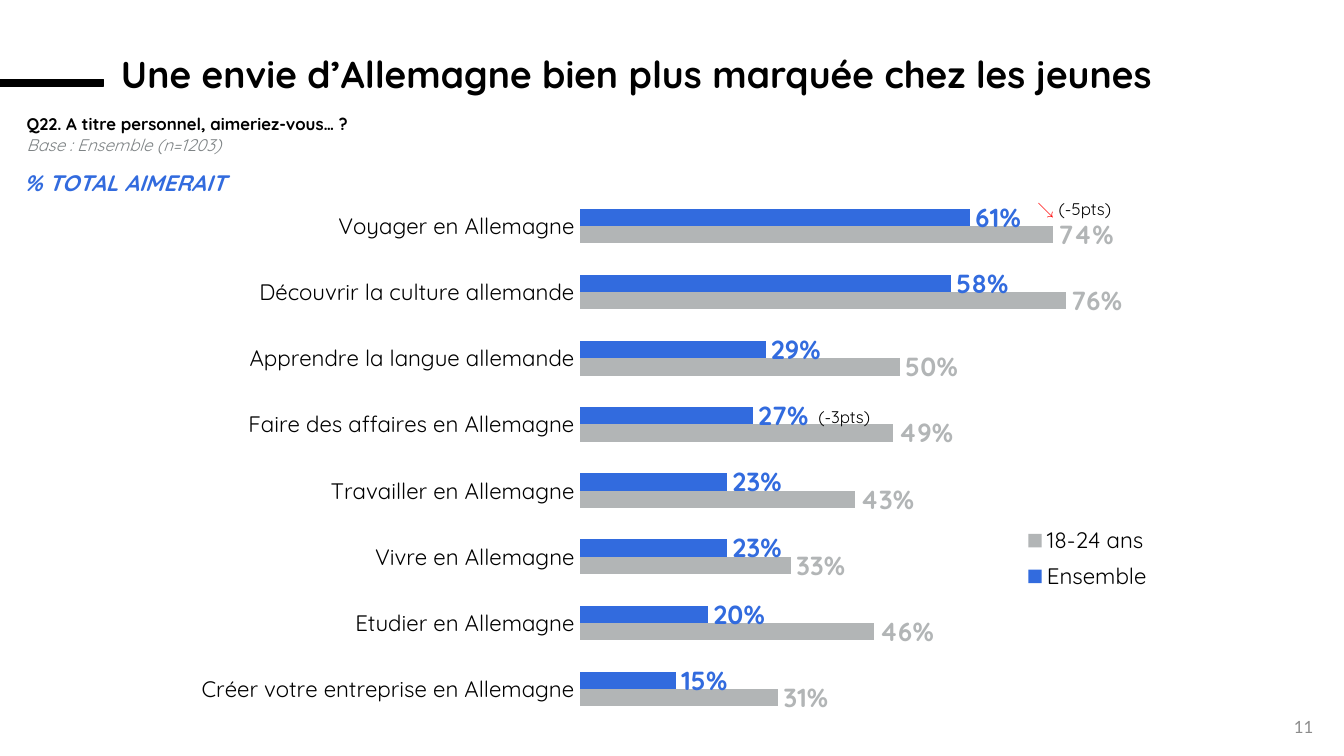
from lxml.etree import SubElement
from pptx import Presentation
from pptx.chart.data import CategoryChartData
from pptx.dml.color import RGBColor
from pptx.enum.chart import XL_CHART_TYPE, XL_LABEL_POSITION, XL_LEGEND_POSITION, XL_TICK_LABEL_POSITION, XL_TICK_MARK
from pptx.enum.shapes import MSO_SHAPE
from pptx.enum.text import MSO_ANCHOR, PP_ALIGN
from pptx.oxml.ns import qn
from pptx.util import Inches, Pt

BLACK = RGBColor(0x00, 0x00, 0x00)
BLUE = RGBColor(0x32, 0x6B, 0xDE)
SILVER = RGBColor(0xB2, 0xB5, 0xB6)
GREY = RGBColor(0x7E, 0x83, 0x85)
PAGE_GREY = RGBColor(0x8C, 0x8C, 0x8C)
RED = RGBColor(0xFF, 0x00, 0x00)


def style(font, size, color, **formats):
    font.size = Pt(size)
    font.color.rgb = color
    for name, value in {"name": "Quicksand", "bold": False, **formats}.items():
        setattr(font, name, value)


def set_layout(parent, index, target, **box):
    """Place a chart part by fractions of the chart area."""
    for old in parent.findall(qn("c:layout")):
        parent.remove(old)
    layout = SubElement(parent, qn("c:layout"))
    parent.insert(index, layout)
    manual = SubElement(layout, qn("c:manualLayout"))
    if target:
        SubElement(manual, qn("c:layoutTarget")).set("val", target)
    for mode in ("xMode", "yMode"):
        SubElement(manual, qn(f"c:{mode}")).set("val", "edge")
    for name, value in box.items():
        SubElement(manual, qn(f"c:{name}")).set("val", str(value))


# Widescreen slide, 16:9
prs = Presentation()
prs.slide_width = Inches(10)
prs.slide_height = prs.slide_width * 9 // 16
s = prs.slides.add_slide(prs.slide_layouts[5])

# Title
title = s.shapes.title
title.left, title.top, title.width, title.height = (Inches(v) for v in (0.9, 0.44, 8.87, 0.27))
tf = title.text_frame
tf.text = "Une envie d’Allemagne bien plus marquée chez les jeunes"
tf.margin_left = tf.margin_top = tf.margin_right = tf.margin_bottom = 0
tf.vertical_anchor = MSO_ANCHOR.BOTTOM
p = tf.paragraphs[0]
p.alignment, p.line_spacing = PP_ALIGN.LEFT, 0.8
style(p.runs[0].font, 20, BLACK, bold=True)

# Bar beside the title
bar = s.shapes.add_shape(MSO_SHAPE.RECTANGLE, 0, Inches(0.59), Inches(0.77), Inches(0.05))
bar.shadow.inherit = False
bar.fill.solid()
bar.fill.fore_color.rgb = BLACK
bar.line.color.rgb = BLACK
bar.line.width = Pt(0.75)

# Chart
data = CategoryChartData(number_format="0%")
data.categories = [
    "Voyager en Allemagne", "Découvrir la culture allemande",
    "Apprendre la langue allemande", "Faire des affaires en Allemagne",
    "Travailler en Allemagne", "Vivre en Allemagne",
    "Etudier en Allemagne", "Créer votre entreprise en Allemagne",
]
data.add_series("Ensemble", (0.61, 0.58, 0.29, 0.27, 0.23, 0.23, 0.20, 0.15))
data.add_series("18-24 ans", (0.74, 0.76, 0.50, 0.49, 0.43, 0.33, 0.46, 0.31))
chart = s.shapes.add_chart(XL_CHART_TYPE.BAR_CLUSTERED, Inches(1.5), Inches(1.28),
                           Inches(7.1), Inches(4.23), data).chart
chart.has_title = False
style(chart.font, 10, BLUE)

plot = chart.plots[0]
plot.gap_width, plot.overlap, plot.vary_by_categories = 182, 0, False
set_layout(plot._element.getparent(), 0, "inner", x=0.394, y=0.037, w=0.606, h=0.931)
for series, color in zip(plot.series, (BLUE, SILVER)):
    series.format.fill.solid()
    series.format.fill.fore_color.rgb = color
    labels = series.data_labels
    labels.show_value = True
    labels.position = XL_LABEL_POSITION.OUTSIDE_END
    labels.number_format, labels.number_format_is_linked = "0%", False
    style(labels.font, 14, color, bold=True)

# Axes
axis = chart.category_axis
axis.reverse_order = True
axis.major_tick_mark = axis.minor_tick_mark = XL_TICK_MARK.NONE
axis.tick_label_position = XL_TICK_LABEL_POSITION.NEXT_TO_AXIS
axis.format.line.fill.background()
style(axis.tick_labels.font, 12, BLACK)
values = chart.value_axis
values.minimum_scale, values.maximum_scale = 0, 0.9
values.major_tick_mark = values.minor_tick_mark = XL_TICK_MARK.NONE
values.tick_labels.number_format, values.tick_labels.number_format_is_linked = "0%", False
values.has_major_gridlines = values.visible = False

# Legend
chart.has_legend = True
legend = chart.legend
legend.position = XL_LEGEND_POSITION.RIGHT
legend.include_in_layout = False
style(legend.font, 12, BLACK)
set_layout(legend._element, 1, None, x=0.86, y=0.61, w=0.14, h=0.14)

# Question, subtitle, changes and page number: box, then one list of runs per paragraph
texts = [
    ((0.08, 1.21, 2.5, 0.3), [[("% TOTAL AIMERAIT", 12, BLUE, {"bold": True, "italic": True})]]),
    ((0.1, 0.8, 8.94, 0.4), [
        [("Q22. A titre personnel, aimeriez-vous… ?", 9, BLACK, {"bold": True})],
        [("Base : Ensemble (n=1203)", 9, GREY, {"italic": True})]]),
    ((7.62, 1.43, 0.86, 0.25), [[("↘", 9, RED, {}), (" (-5pts)", 9, BLACK, {})]]),
    ((5.99, 2.98, 0.86, 0.25), [[("(-3pts)", 9, BLACK, {})]]),
    ((7.62, 5.26, 2.25, 0.3), [[("11", 9, PAGE_GREY, {"name": "Lato"})]]),
]
for box, paragraphs in texts:
    tf = s.shapes.add_textbox(*(Inches(v) for v in box)).text_frame
    tf.word_wrap = True
    for i, runs in enumerate(paragraphs):
        p = tf.add_paragraph() if i else tf.paragraphs[0]
        for text, size, color, formats in runs:
            r = p.add_run()
            r.text = text
            style(r.font, size, color, **formats)

# The page number comes last
tf.vertical_anchor = MSO_ANCHOR.MIDDLE
p.alignment = PP_ALIGN.RIGHT

prs.save("out.pptx")
